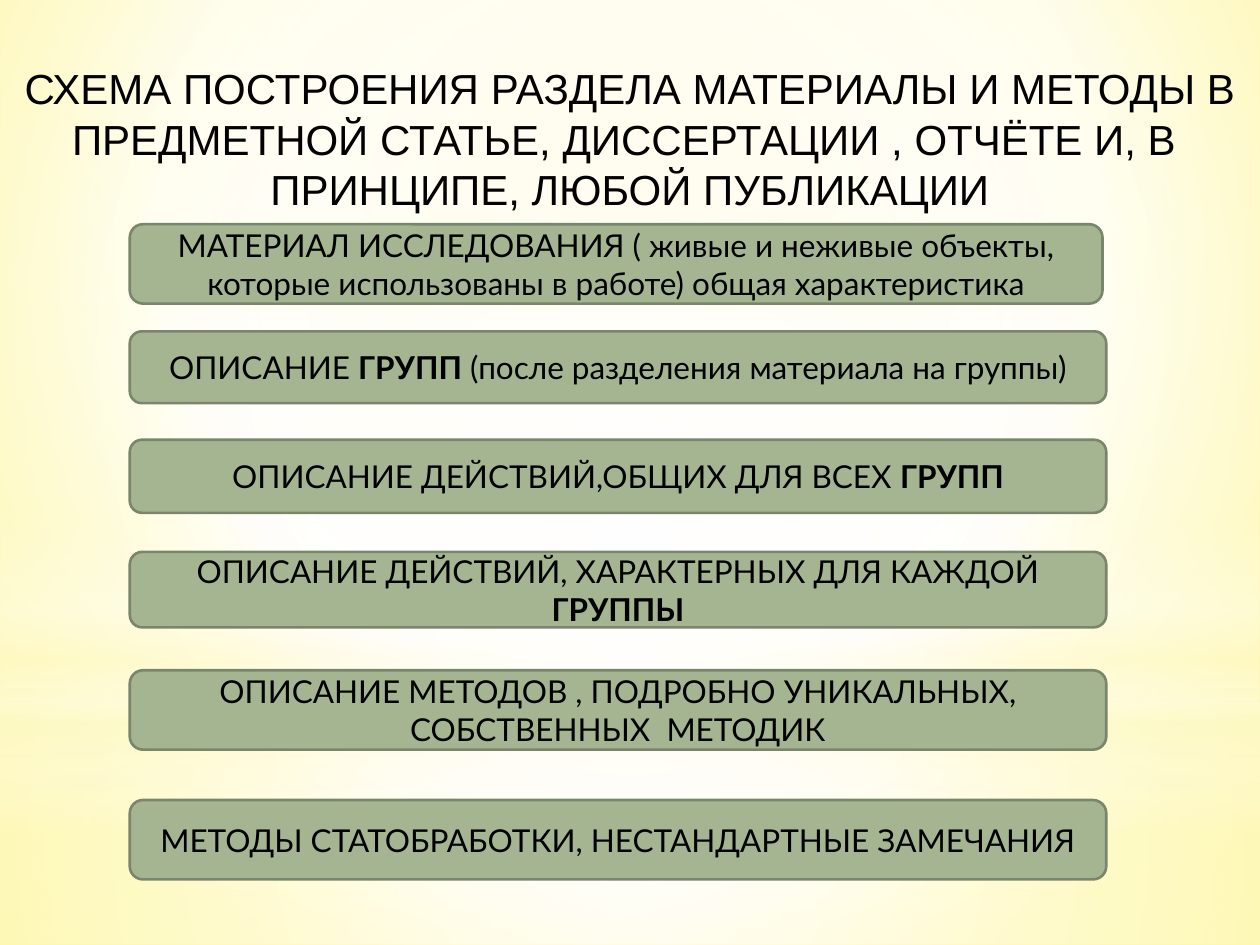
from lxml.etree import SubElement
from pptx import Presentation
from pptx.dml.color import RGBColor
from pptx.enum.shapes import MSO_SHAPE
from pptx.enum.text import MSO_ANCHOR, PP_ALIGN
from pptx.oxml import parse_xml
from pptx.oxml.ns import nsdecls, qn
from pptx.util import Inches, Pt

COLORS = {
    "white": "FFFFFF",
    "cream": "FEFAC9",
    "pale_yellow": "FFF9B5",
    "yellow": "FFF46F",
    "sage": "A5B592",
    "sage_dark": "7A866C",
    "text": "000000",
}
CENTER = (50, 50, 50, 50)
STEP_LEFT = 1.03

GLOWS = [
    (MSO_SHAPE.RECTANGLE, 5.58, 1.92,
     [(0, "white", 91), (37, "white", 76), (100, "cream", 79)], CENTER),
    (MSO_SHAPE.RECTANGLE, 0, 5.58,
     [(0, "white", 89), (48, "white", 62), (100, "cream", 79)], CENTER),
    (MSO_SHAPE.RECTANGLE, 4.12, 2.5,
     [(0, "white", 0), (29, "white", 30), (45, "cream", 40),
      (55, "white", 26), (65, "cream", 60), (100, "white", 0)], None),
    (MSO_SHAPE.OVAL, 1.75, 5.58,
     [(0, "white", 100), (56, "white", 0)], CENTER),
]

TITLE = [
    "СХЕМА ПОСТРОЕНИЯ РАЗДЕЛА МАТЕРИАЛЫ И МЕТОДЫ В ПРЕДМЕТНОЙ СТАТЬЕ, "
    "ДИССЕРТАЦИИ , ОТЧЁТЕ И, В ",
    "ПРИНЦИПЕ, ЛЮБОЙ ПУБЛИКАЦИИ",
]

STEPS = [
    (1.78, 7.72, 0.63, [("МАТЕРИАЛ ИССЛЕДОВАНИЯ ( живые и неживые объекты, которые "
                         "использованы в работе) общая характеристика", False)]),
    (2.63, 7.75, 0.57, [("ОПИСАНИЕ ", False), ("ГРУПП", True),
                        (" (после разделения материала на группы)", False)]),
    (3.49, 7.75, 0.58, [("ОПИСАНИЕ ДЕЙСТВИЙ,ОБЩИХ ДЛЯ ВСЕХ ", False),
                        ("ГРУПП", True)]),
    (4.38, 7.75, 0.6, [("ОПИСАНИЕ ДЕЙСТВИЙ, ХАРАКТЕРНЫХ ДЛЯ КАЖДОЙ ", False),
                       ("ГРУППЫ", True)]),
    (5.32, 7.75, 0.63, [("ОПИСАНИЕ МЕТОДОВ , ПОДРОБНО УНИКАЛЬНЫХ, "
                         "СОБСТВЕННЫХ  МЕТОДИК", False)]),
    (6.35, 7.75, 0.63, [("МЕТОДЫ СТАТОБРАБОТКИ, НЕСТАНДАРТНЫЕ ЗАМЕЧАНИЯ", False)]),
]


def color(name):
    return RGBColor.from_string(COLORS[name])


def set_gradient(fill, properties, stops, focus):
    fill.solid()
    gradient = parse_xml(f'<a:gradFill {nsdecls("a")} rotWithShape="1"/>')
    stop_list = SubElement(gradient, qn("a:gsLst"))
    for position, name, opacity in stops:
        stop = SubElement(stop_list, qn("a:gs"), pos=str(position * 1000))
        tint = SubElement(stop, qn("a:srgbClr"), val=COLORS[name])
        if opacity < 100:
            SubElement(tint, qn("a:alpha"), val=str(opacity * 1000))
    if focus:
        circle = SubElement(gradient, qn("a:path"), path="circle")
        sides = {side: str(share * 1000) for side, share in zip("ltrb", focus)}
        SubElement(circle, qn("a:fillToRect"), **sides)
    else:
        SubElement(gradient, qn("a:lin"), ang=str(90 * 60000), scaled="0")
    properties.replace(properties.find(qn("a:solidFill")), gradient)


def paint_background(slide):
    fill = slide.background.fill
    fill.solid()
    properties = slide.element.find(".//" + qn("p:bgPr"))
    stops = [(0, "pale_yellow", 100), (60, "white", 100), (100, "yellow", 100)]
    set_gradient(fill, properties, stops, (20, 10, 20, 60))


def add_glow(slide, outline, top, height, stops, focus):
    glow = slide.shapes.add_shape(outline, 0, Inches(top), Inches(10), Inches(height))
    glow.shadow.inherit = False
    glow.line.fill.background()
    set_gradient(glow.fill, glow.element.spPr, stops, focus)


def add_run(paragraph, text, font_name, size, bold=False):
    paragraph.alignment = PP_ALIGN.CENTER
    run = paragraph.add_run()
    run.text = text
    run.font.name = font_name
    run.font.size = Pt(size)
    run.font.bold = bold
    run.font.color.rgb = color("text")


def add_title(slide):
    title = slide.shapes.add_textbox(0, Inches(0.45), Inches(10), Inches(2.12))
    frame = title.text_frame
    frame.word_wrap = True
    for index, line in enumerate(TITLE):
        paragraph = frame.add_paragraph() if index else frame.paragraphs[0]
        add_run(paragraph, line, "Arial", 24)


def add_step(slide, top, width, height, parts):
    step = slide.shapes.add_shape(
        MSO_SHAPE.ROUNDED_RECTANGLE,
        Inches(STEP_LEFT), Inches(top), Inches(width), Inches(height))
    step.shadow.inherit = False
    step.fill.solid()
    step.fill.fore_color.rgb = color("sage")
    step.line.color.rgb = color("sage_dark")
    step.line.width = Pt(1.5)
    frame = step.text_frame
    frame.word_wrap = True
    frame.vertical_anchor = MSO_ANCHOR.MIDDLE
    for text, bold in parts:
        add_run(frame.paragraphs[0], text, "Lato", 18, bold)


def main():
    presentation = Presentation()
    presentation.slide_width = Inches(10)
    presentation.slide_height = Inches(7.5)
    slide = presentation.slides.add_slide(presentation.slide_layouts[6])
    paint_background(slide)
    for glow in GLOWS:
        add_glow(slide, *glow)
    add_title(slide)
    for step in STEPS:
        add_step(slide, *step)
    presentation.save("out.pptx")


if __name__ == "__main__":
    main()
